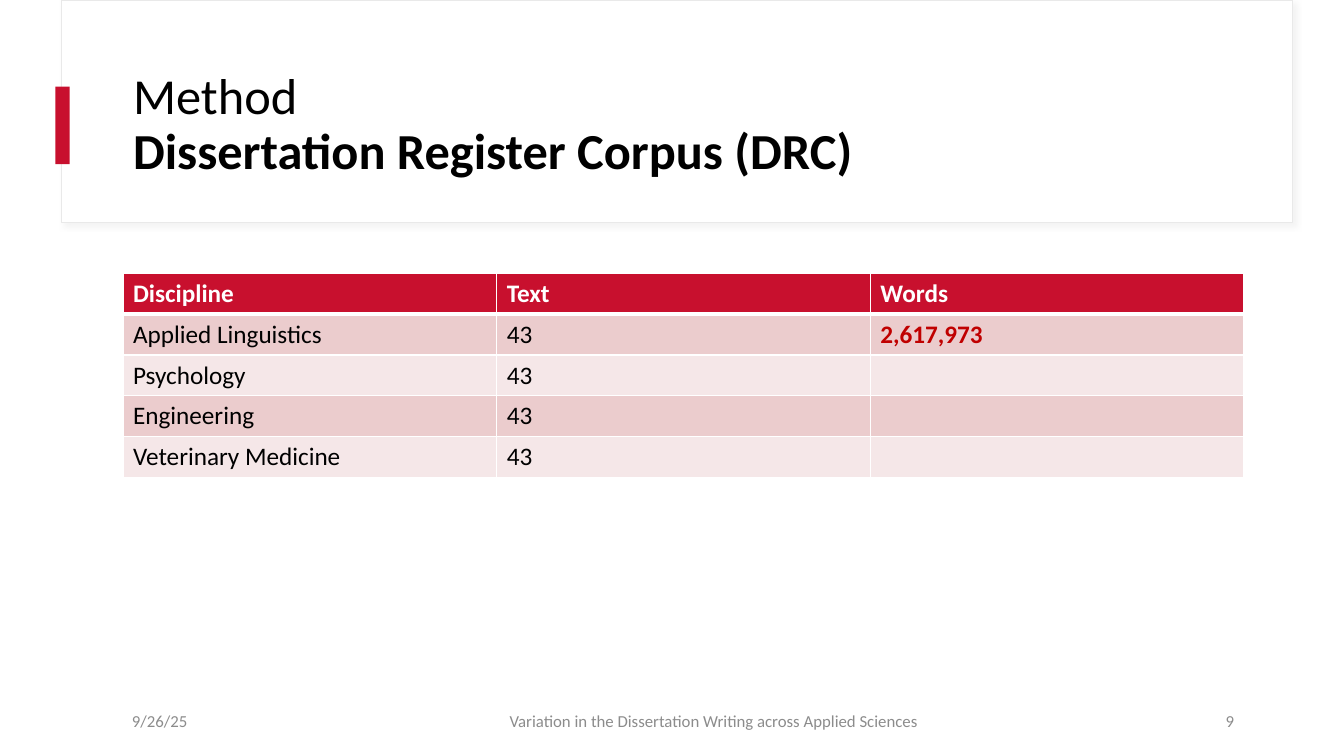
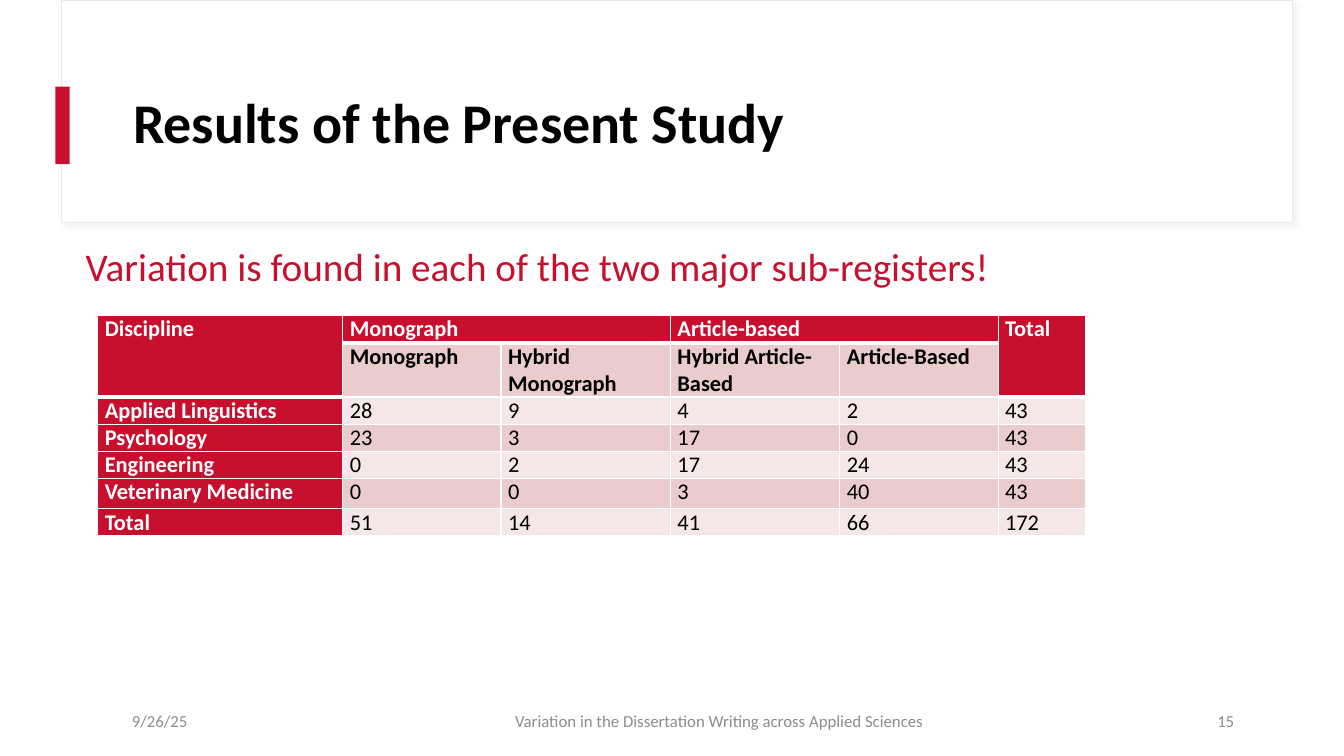
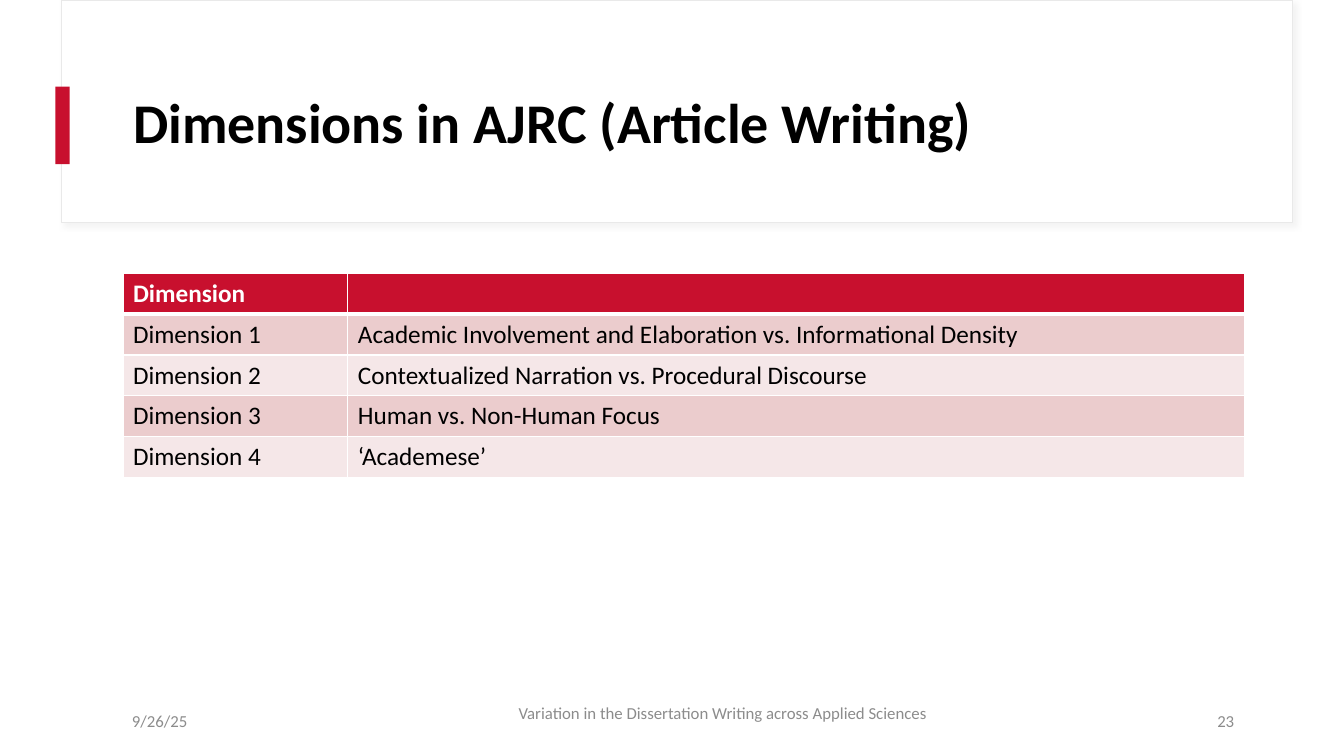
from lxml import etree
from pptx import Presentation
from pptx.dml.color import RGBColor
from pptx.enum import shapes, text
from pptx.oxml.ns import qn
from pptx.util import Inches, Pt

COLORS = {
    "red": "C8102E",
    "accent": "C00000",
    "dark_band": "EBCCCD",
    "light_band": "F5E7E8",
    "frame": "E9E9E9",
    "shadow": "D9D9D9",
    "footer": "8C8C8C",
    "black": "000000",
    "white": "FFFFFF",
}
FONT = "Calibri"
FOOTER = "Variation in the Dissertation Writing across Applied Sciences"
DATE = "9/26/25"
TITLE_BOX = (1.22, 0.6, 11.12, 1.29)
TABLE_BOX = (1.22, 2.71, 11.12, 2.03)


def rgb(name):
    """Return the palette colour with this name."""
    return RGBColor.from_string(COLORS[name])


def inches(box):
    """Turn a box in inches into lengths."""
    return [Inches(value) for value in box]


def style_paragraph(paragraph, size, color, bold=False):
    """Format every run of a paragraph."""
    for run in paragraph.runs:
        run.font.name = FONT
        run.font.size = Pt(size)
        run.font.bold = bold
        run.font.color.rgb = rgb(color)


def place(shape, box):
    """Move a shape to a box."""
    shape.left, shape.top, shape.width, shape.height = inches(box)


def add_block(slide, box, fill, line=None):
    """Draw a plain rectangle."""
    block = slide.shapes.add_shape(shapes.MSO_SHAPE.RECTANGLE, *inches(box))
    block.shadow.inherit = False
    block.fill.solid()
    block.fill.fore_color.rgb = rgb(fill)
    if line:
        block.line.color.rgb = rgb(line)
        block.line.width = Pt(0.75)
    else:
        block.line.fill.background()
    return block


def add_soft_shadow(shape):
    """Give a shape a faint shadow to the lower right."""
    effects = shape.element.spPr.find(qn("a:effectLst"))
    shadow = etree.SubElement(effects, qn("a:outerShdw"), blurRad=str(Pt(4)),
                              dist=str(Pt(3)), dir=str(45 * 60000), rotWithShape="0")
    color = etree.SubElement(shadow, qn("a:srgbClr"), val=COLORS["shadow"])
    etree.SubElement(color, qn("a:alpha"), val="30000")


def build_master(presentation, slide):
    """Put the title frame and its red marker on the slide master."""
    frame = add_block(slide, (0.61, 0, 12.21, 2.21), "white", "frame")
    add_soft_shadow(frame)
    marker = add_block(slide, (0.55, 0.86, 0.14, 0.77), "red")
    tree = presentation.slide_master.shapes.element
    for offset, block in enumerate((frame, marker)):
        block.element.nvSpPr.cNvPr.set("id", str(100 + offset))
        tree.insert(2 + offset, block.element)


def set_title(slide, title, size, bold=True):
    """Fill the title placeholder."""
    shape = slide.shapes.title
    place(shape, TITLE_BOX)
    frame = shape.text_frame
    frame.text = title
    frame.auto_size = text.MSO_AUTO_SIZE.NONE
    frame.vertical_anchor = text.MSO_ANCHOR.MIDDLE
    paragraph = frame.paragraphs[0]
    paragraph.alignment = text.PP_ALIGN.LEFT
    paragraph.line_spacing = 0.9
    style_paragraph(paragraph, size, "black", bold)
    return paragraph


def add_footer(slide, number, middle_width, middle_height=0.4):
    """Write the date, the talk title and the slide number."""
    top = 6.95
    parts = (
        (DATE, (1.21, top, 3, 0.4), text.PP_ALIGN.LEFT),
        (FOOTER, (4.42, top, middle_width, middle_height), text.PP_ALIGN.CENTER),
        (str(number), (9.34, top, 3, 0.4), text.PP_ALIGN.RIGHT),
    )
    for words, box, alignment in parts:
        frame = slide.shapes.add_textbox(*inches(box)).text_frame
        frame.word_wrap = True
        frame.vertical_anchor = text.MSO_ANCHOR.MIDDLE
        frame.text = words
        frame.paragraphs[0].alignment = alignment
        style_paragraph(frame.paragraphs[0], 12, "footer")


def set_borders(cell, top, bottom):
    """Draw white cell borders with the given top and bottom widths."""
    widths = {"a:lnL": 1, "a:lnR": 1, "a:lnT": top, "a:lnB": bottom}
    properties = cell._tc.get_or_add_tcPr()
    for index, (tag, width) in enumerate(widths.items()):
        line = etree.Element(qn(tag), w=str(Pt(width)))
        fill = etree.SubElement(line, qn("a:solidFill"))
        etree.SubElement(fill, qn("a:srgbClr"), val=COLORS["white"])
        properties.insert(index, line)


def add_banded_table(slide, box, rows, columns, heights, size=18,
                     spans=(), side_headers=(), bold_rows=(), tight=False):
    """Add a table with red headers and alternating pink rows."""
    table = slide.shapes.add_table(len(rows), len(columns), *inches(box)).table
    table.first_row = table.horz_banding = False
    for column, width in zip(table.columns, columns):
        column.width = Inches(width)
    for row, height in zip(table.rows, heights):
        row.height = Inches(height)
    for first, last in spans:
        table.cell(*first).merge(table.cell(*last))
    top_headers = {(0, column) for column in range(len(columns))}
    top_headers |= {last for first, last in spans}
    for r, values in enumerate(rows):
        for c, value in enumerate(values):
            cell = table.cell(r, c)
            is_header = (r, c) in top_headers or (r, c) in side_headers
            band = "dark_band" if r % 2 else "light_band"
            cell.fill.solid()
            cell.fill.fore_color.rgb = rgb("red" if is_header else band)
            set_borders(cell, 3 if (r - 1, c) in top_headers else 1,
                        3 if (r, c) in top_headers else 1)
            if tight:
                cell.margin_left = cell.margin_right = Inches(0.07)
                cell.margin_top = cell.margin_bottom = 0
            if value:
                cell.text = value
                style_paragraph(cell.text_frame.paragraphs[0], size,
                                "white" if is_header else "black",
                                is_header or r in bold_rows)
    return table


def build_method(slide):
    """Fill the slide on the corpus."""
    title = set_title(slide, "Method\vDissertation Register Corpus (DRC)", 36, False)
    title.runs[1].font.bold = True
    rows = [
        ("Discipline", "Text", "Words"),
        ("Applied Linguistics", "43", "2,617,973"),
        ("Psychology", "43", ""),
        ("Engineering", "43", ""),
        ("Veterinary Medicine", "43", ""),
    ]
    table = add_banded_table(slide, TABLE_BOX, rows, [TABLE_BOX[2] / 3] * 3,
                             [TABLE_BOX[3] / len(rows)] * len(rows))
    style_paragraph(table.cell(1, 2).text_frame.paragraphs[0], 18, "accent", True)
    add_footer(slide, 9, 5.32)


def set_lead(slide, box, words):
    """Fill the body placeholder with one red sentence."""
    body = slide.placeholders[1]
    place(body, box)
    frame = body.text_frame
    frame.text = words
    frame.auto_size = text.MSO_AUTO_SIZE.NONE
    paragraph = frame.paragraphs[0]
    properties = paragraph._p.get_or_add_pPr()
    properties.set("marL", "0")
    properties.set("indent", "0")
    etree.SubElement(properties, qn("a:buNone"))
    paragraph.line_spacing = 1.1
    paragraph.space_before = Pt(0)
    style_paragraph(paragraph, 28, "red")


def build_results(slide):
    """Fill the slide on the results by discipline."""
    set_title(slide, "Results of the Present Study", 40)
    set_lead(slide, (0.75, 2.31, 12.09, 4.04),
             "Variation is found in each of the two major sub-registers!")
    add_footer(slide, 15, 5.43)
    rows = [
        ("Discipline", "Monograph", "", "Article-based", "", "Total"),
        ("", "Monograph", "Hybrid Monograph", "Hybrid Article-Based", "Article-Based", ""),
        ("Applied Linguistics", "28", "9", "4", "2", "43"),
        ("Psychology", "23", "3", "17", "0", "43"),
        ("Engineering", "0", "2", "17", "24", "43"),
        ("Veterinary Medicine", "0", "0", "3", "40", "43"),
        ("Total", "51", "14", "41", "66", "172"),
    ]
    add_banded_table(
        slide, (0.97, 3.13, 9.79, 2.19), rows,
        [2.43, 1.57, 1.68, 1.68, 1.57, 0.87],
        [0.27, 0.54, 0.27, 0.27, 0.27, 0.3, 0.27], size=16,
        spans=[((0, 0), (1, 0)), ((0, 1), (0, 2)), ((0, 3), (0, 4)), ((0, 5), (1, 5))],
        side_headers={(row, 0) for row in range(2, len(rows))},
        bold_rows={1}, tight=True)


def build_dimensions(slide):
    """Fill the slide on the dimensions of article writing."""
    set_title(slide, "Dimensions in AJRC (Article Writing)", 40)
    names = [
        "Academic Involvement and Elaboration vs. Informational Density",
        "Contextualized Narration vs. Procedural Discourse",
        "Human vs. Non-Human Focus",
        "‘Academese’",
    ]
    rows = [("Dimension", "")]
    rows += [(f"Dimension {number}", name) for number, name in enumerate(names, 1)]
    add_banded_table(slide, TABLE_BOX, rows, [2.23, 8.89],
                     [TABLE_BOX[3] / len(rows)] * len(rows))
    add_footer(slide, 23, 5.5, 0.24)


def main():
    """Build and save the presentation."""
    presentation = Presentation()
    presentation.slide_width = Inches(13.33)
    presentation.slide_height = Inches(7.5)
    title_and_body, title_only = (presentation.slide_layouts[i] for i in (1, 5))
    pages = (
        (title_only, build_method),
        (title_and_body, build_results),
        (title_only, build_dimensions),
    )
    for index, (layout, build) in enumerate(pages):
        slide = presentation.slides.add_slide(layout)
        if index == 0:
            build_master(presentation, slide)
        build(slide)
    presentation.save("out.pptx")


if __name__ == "__main__":
    main()
